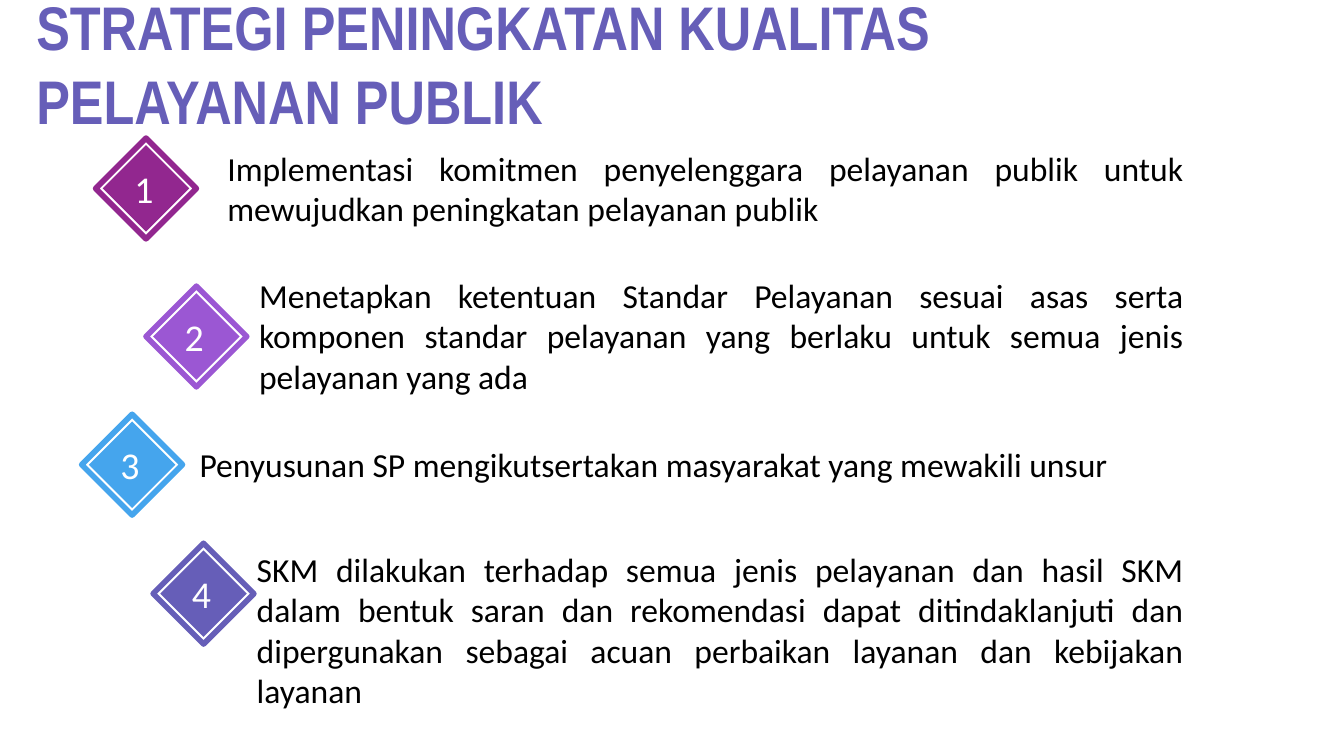
from pptx import Presentation
from pptx.dml.color import RGBColor
from pptx.enum.shapes import MSO_SHAPE
from pptx.enum.text import MSO_ANCHOR, MSO_AUTO_SIZE, PP_ALIGN
from pptx.util import Cm, Pt

TITLE = "STRATEGI PENINGKATAN KUALITAS PELAYANAN PUBLIK"
STRATEGIES = [
    ("92278F", (2.41, 3.48), (5.48, 3.6, 2.31),
     "Implementasi komitmen penyelenggara pelayanan publik untuk "
     "mewujudkan peningkatan pelayanan publik"),
    ("9B57D3", (3.68, 7.21), (6.28, 6.8, 3.33),
     "Menetapkan ketentuan Standar Pelayanan sesuai asas serta komponen "
     "standar pelayanan yang berlaku untuk semua jenis pelayanan yang ada"),
    ("45A5ED", (2.06, 10.44), (4.78, 11.05, 1.27),
     "Penyusunan SP mengikutsertakan masyarakat yang mewakili unsur"),
    ("665EB8", (3.86, 13.69), (6.22, 13.71, 4.37),
     "SKM dilakukan terhadap semua jenis pelayanan dan hasil SKM dalam "
     "bentuk saran dan rekomendasi dapat ditindaklanjuti dan dipergunakan "
     "sebagai acuan perbaikan layanan dan kebijakan layanan"),
]


def color(value):
    """Turn a hex string into a colour."""
    return RGBColor.from_string(value)


def write(shape, text, size, fill="000000", font="Calibri", bold=False,
          align=PP_ALIGN.JUSTIFY, anchor=MSO_ANCHOR.TOP,
          fit=MSO_AUTO_SIZE.SHAPE_TO_FIT_TEXT):
    """Put formatted text into a shape."""
    frame = shape.text_frame
    frame.word_wrap = True
    frame.auto_size = fit
    frame.vertical_anchor = anchor
    paragraph = frame.paragraphs[0]
    paragraph.alignment = align
    run = paragraph.add_run()
    run.text = text
    run.font.name = font
    run.font.size = Pt(size)
    run.font.bold = bold
    run.font.color.rgb = color(fill)


class StrategySlide:
    """Hold the style and the current slide."""

    accent = "665EB8"
    badge_size = 2.54
    badge_inset = 0.18
    text_right = 30.08

    def __init__(self, presentation):
        """Add a title-only slide."""
        self.slide = presentation.slides.add_slide(presentation.slide_layouts[5])

    def title(self, text):
        """Place and format the title."""
        shape = self.slide.shapes.title
        shape.left, shape.top = Cm(0.66), Cm(0.53)
        shape.width, shape.height = Cm(30.68), Cm(2.13)
        write(shape, text, 44, self.accent, "Arial Narrow", True,
              PP_ALIGN.LEFT, MSO_ANCHOR.MIDDLE)

    def diamond(self, group, left, top, size):
        """Add a plain diamond to a group."""
        shape = group.shapes.add_shape(
            MSO_SHAPE.DIAMOND, Cm(left), Cm(top), Cm(size), Cm(size))
        shape.shadow.inherit = False
        return shape

    def badge(self, number, left, top, fill):
        """Add a numbered diamond inside an outlined one."""
        group = self.slide.shapes.add_group_shape()
        inset = self.badge_inset
        inner = self.diamond(group, left + inset, top + inset,
                             self.badge_size - 2 * inset)
        inner.fill.solid()
        inner.fill.fore_color.rgb = color(fill)
        inner.line.fill.background()
        write(inner, str(number), 27, "FFFFFF",
              anchor=MSO_ANCHOR.MIDDLE, fit=MSO_AUTO_SIZE.NONE)
        outer = self.diamond(group, left, top, self.badge_size)
        outer.fill.background()
        outer.line.color.rgb = color(fill)
        outer.line.width = Pt(4)

    def description(self, text, left, top, height):
        """Add a justified text that ends at the common right edge."""
        shape = self.slide.shapes.add_textbox(
            Cm(left), Cm(top), Cm(self.text_right - left), Cm(height))
        write(shape, text, 24)


def main():
    """Build and save the presentation."""
    presentation = Presentation()
    presentation.slide_width, presentation.slide_height = Cm(33.87), Cm(19.05)
    page = StrategySlide(presentation)
    page.title(TITLE)
    for number, (fill, corner, box, text) in enumerate(STRATEGIES, 1):
        page.badge(number, *corner, fill)
        page.description(text, *box)
    presentation.save("out.pptx")


if __name__ == "__main__":
    main()
